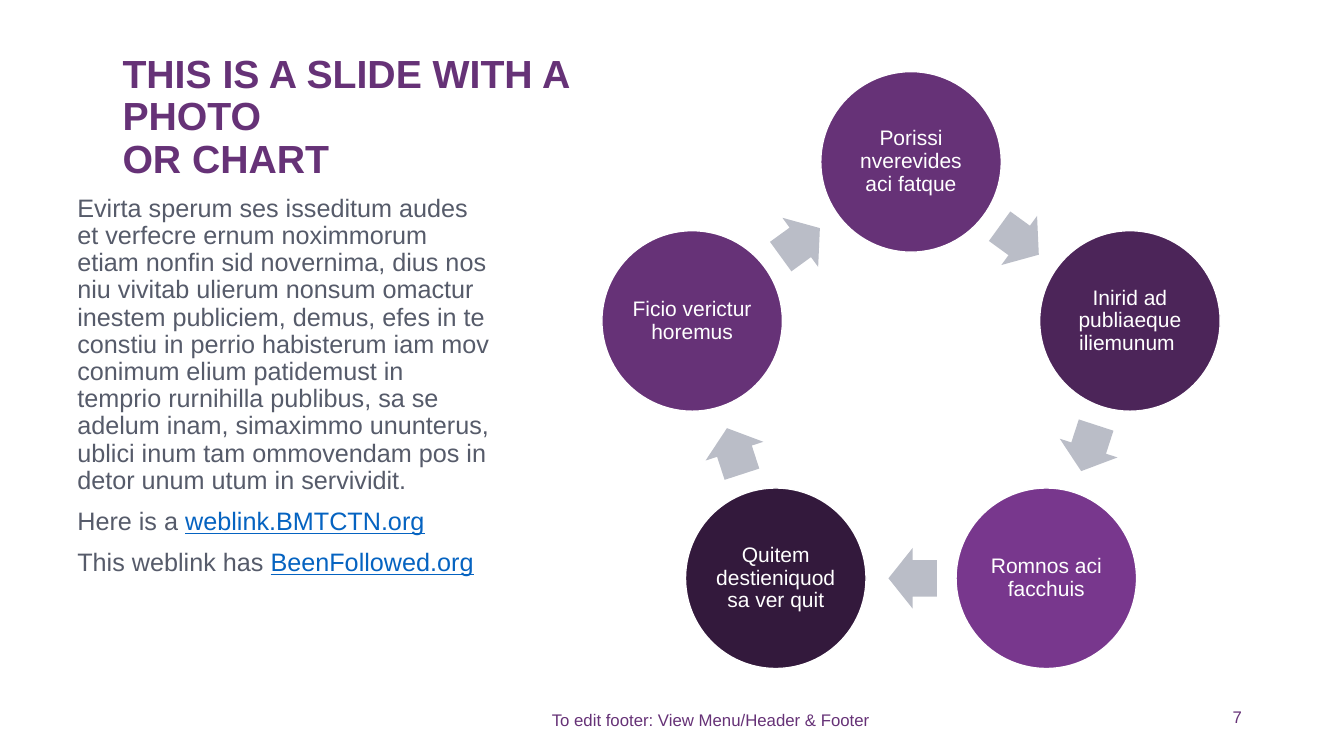
import math

import pptx
import pptx.dml.color
import pptx.enum.shapes
import pptx.enum.text
import pptx.util

Cm = pptx.util.Cm
Pt = pptx.util.Pt
ALIGN = pptx.enum.text.PP_ALIGN
ANCHOR = pptx.enum.text.MSO_ANCHOR
SHAPE = pptx.enum.shapes.MSO_SHAPE

COLOURS = {
    "purple": "663277",
    "plum": "4C2559",
    "violet": "78378D",
    "aubergine": "33193C",
    "arrow": "BABDC7",
    "body": "565B6A",
    "link": "0563C1",
    "white": "FFFFFF",
}

CYCLE_STEPS = [
    ("Porissi nverevides aci fatque", "purple"),
    ("Inirid ad publiaeque iliemunum ", "plum"),
    ("Romnos aci facchuis", "violet"),
    ("Quitem destieniquod sa ver quit", "aubergine"),
    ("Ficio verictur horemus", "purple"),
]
CENTRE_X, CENTRE_Y, RADIUS = 22.96, 9.88, 5.8
CIRCLE_SIZE = 4.55
ARROW_WIDTH, ARROW_HEIGHT = 1.22, 1.53
ARROW_SETBACK = 0.04

BODY = [
    [("Evirta sperum ses isseditum audes et verfecre ernum noximmorum etiam "
      "nonfin sid novernima, dius nos niu vivitab ulierum nonsum omactur "
      "inestem publiciem, demus, efes in te constiu in perrio habisterum iam "
      "mov conimum elium patidemust in temprio rurnihilla publibus, sa se "
      "adelum inam, simaximmo ununterus, ublici inum tam ommovendam pos in "
      "detor unum utum in servividit.", False)],
    [("Here is a ", False), ("weblink.BMTCTN.org", True)],
    [("This weblink has ", False), ("BeenFollowed.org", True)],
]


def colour(name):
    return pptx.dml.color.RGBColor.from_string(COLOURS[name])


def apply_format(target, values):
    for name, value in values.items():
        setattr(target, name, value)


def add_span(para, text, size, colour_name, **font_values):
    span = para.add_run()
    span.text = text
    apply_format(span.font, {"name": "Arial", "size": Pt(size), **font_values})
    span.font.color.rgb = colour(colour_name)


def add_box(page, left, top, width, height, anchor):
    box = page.shapes.add_textbox(Cm(left), Cm(top), Cm(width), Cm(height))
    apply_format(box.text_frame, {"word_wrap": True, "vertical_anchor": anchor})
    return box.text_frame


def add_title(page):
    para = add_box(page, 2.84, 0.94, 11.76, 3.76, ANCHOR.BOTTOM).paragraphs[0]
    para.line_spacing = 0.9
    add_span(para, "THIS IS A SLIDE WITH A PHOTO ", 28, "purple", bold=True)
    para.add_line_break()
    add_span(para, "OR CHART", 28, "purple", bold=True)


def add_body(page):
    frame = add_box(page, 1.7, 4.8, 10.92, 10.59, ANCHOR.TOP)
    for index, spans in enumerate(BODY):
        para = frame.add_paragraph() if index else frame.paragraphs[0]
        apply_format(para, {"line_spacing": 0.9,
                            "space_before": Pt(10 if index else 0)})
        for text, is_link in spans:
            add_span(para, text, 18, "link" if is_link else "body",
                     underline=is_link)


def add_footer_text(page, text, left, top, width, alignment):
    para = add_box(page, left, top, width, 0.64, ANCHOR.MIDDLE).paragraphs[0]
    para.alignment = alignment
    add_span(para, text, 12, "purple")


def add_centred_shape(page, kind, x, y, width, height, fill):
    shape = page.shapes.add_shape(kind, Cm(x - width / 2), Cm(y - height / 2),
                                  Cm(width), Cm(height))
    shape.shadow.inherit = False
    shape.fill.solid()
    shape.fill.fore_color.rgb = colour(fill)
    return shape


def add_circle(page, x, y, text, fill):
    circle = add_centred_shape(page, SHAPE.OVAL, x, y, CIRCLE_SIZE, CIRCLE_SIZE, fill)
    circle.line.color.rgb = colour("white")
    circle.line.width = Pt(1)
    frame = circle.text_frame
    apply_format(frame, {"word_wrap": True, "vertical_anchor": ANCHOR.MIDDLE})
    for side in ("left", "top", "right", "bottom"):
        setattr(frame, f"margin_{side}", Cm(0.05))
    para = frame.paragraphs[0]
    apply_format(para, {"alignment": ALIGN.CENTER, "line_spacing": 0.9})
    add_span(para, text, 15, "white")


def add_arrow(page, start, end):
    """Put a block arrow halfway between two circle centres."""
    heading = math.atan2(end[1] - start[1], end[0] - start[0])
    x = (start[0] + end[0]) / 2 - ARROW_SETBACK * math.cos(heading)
    y = (start[1] + end[1]) / 2 - ARROW_SETBACK * math.sin(heading)
    arrow = add_centred_shape(page, SHAPE.RIGHT_ARROW, x, y,
                              ARROW_WIDTH, ARROW_HEIGHT, "arrow")
    arrow.line.fill.background()
    arrow.adjustments[0] = 0.6
    arrow.adjustments[1] = 0.5
    arrow.rotation = round(math.degrees(heading)) % 360


def add_cycle(page):
    count = len(CYCLE_STEPS)
    angles = [math.tau * index / count for index in range(count)]
    centres = [(CENTRE_X + RADIUS * math.sin(angle),
                CENTRE_Y - RADIUS * math.cos(angle)) for angle in angles]
    for index, (text, fill) in enumerate(CYCLE_STEPS):
        add_circle(page, *centres[index], text, fill)
        add_arrow(page, centres[index], centres[(index + 1) % count])


def main():
    deck = pptx.Presentation()
    deck.slide_width, deck.slide_height = Cm(33.87), Cm(19.05)
    page = deck.slides.add_slide(deck.slide_layouts[6])
    add_title(page)
    add_body(page)
    add_cycle(page)
    add_footer_text(page, "7", 29.16, 17.75, 2.39, ALIGN.RIGHT)
    add_footer_text(page, "To edit footer: View Menu/Header & Footer",
                    8.2, 17.81, 19.43, ALIGN.CENTER)
    deck.save("out.pptx")


if __name__ == "__main__":
    main()
